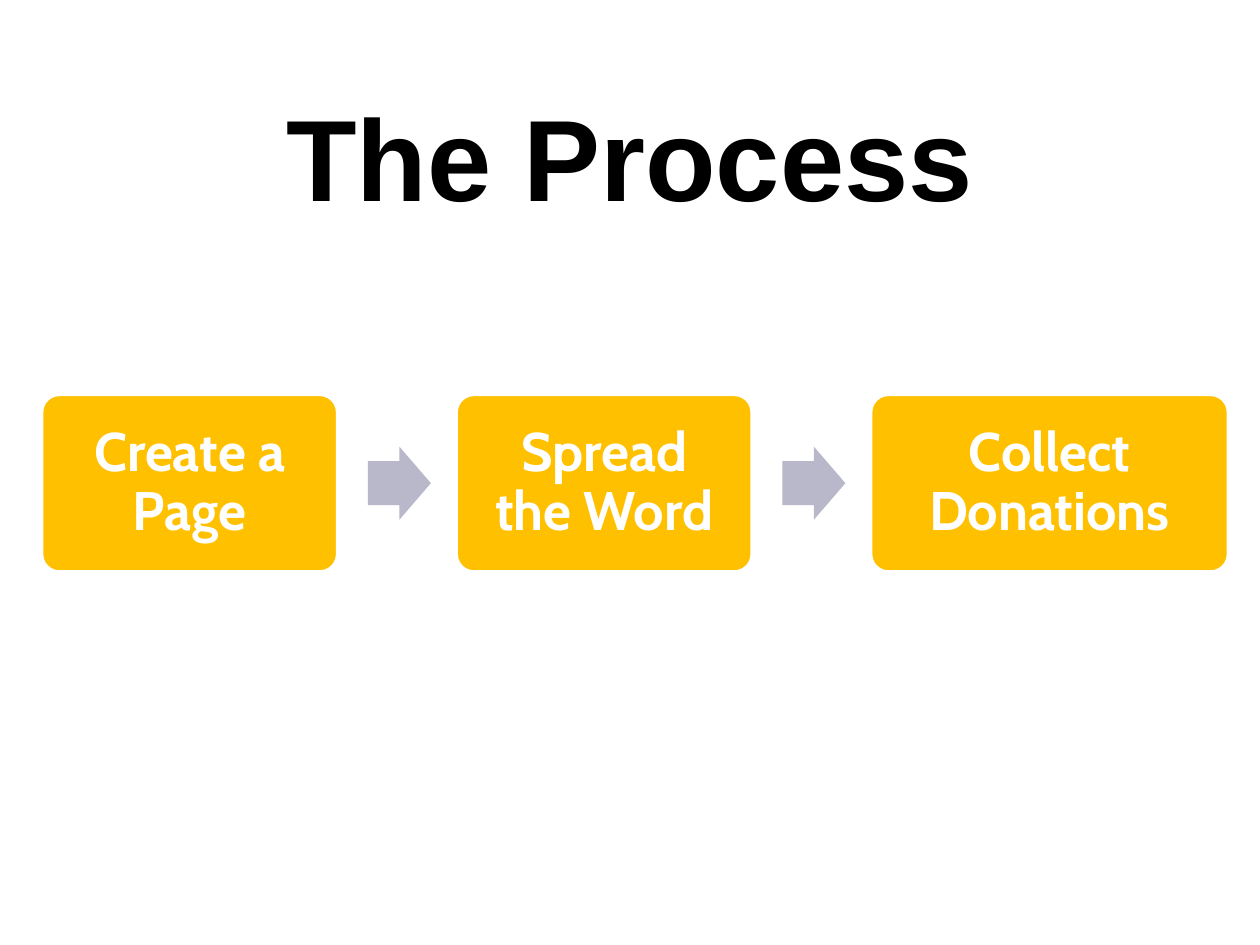
import pptx
import pptx.util
import pptx.dml.color
import pptx.enum.shapes
import pptx.enum.text

Inches = pptx.util.Inches
Pt = pptx.util.Pt
Shapes = pptx.enum.shapes.MSO_SHAPE
Anchor = pptx.enum.text.MSO_ANCHOR

SLIDE_WIDTH, SLIDE_HEIGHT = 10, 7.5
STEPS = [("Create a Page", 2.35), ("Spread the Word", 2.35), ("Collect Donations", 2.84)]
STEP_GAP = 0.94
ARROW_OFFSET, ARROW_WIDTH, ARROW_HEIGHT = 0.24, 0.5, 0.58


def color(value):
    return pptx.dml.color.RGBColor.from_string(value)


def write(shape, text, size, font_name, font_color, anchor, insets):
    frame = shape.text_frame
    frame.word_wrap = True
    frame.vertical_anchor = anchor
    frame.margin_left = frame.margin_right = Inches(insets[0])
    frame.margin_top = frame.margin_bottom = Inches(insets[1])
    paragraph = frame.paragraphs[0]
    paragraph.text = text
    paragraph.alignment = pptx.enum.text.PP_ALIGN.CENTER
    paragraph.font.size = Pt(size)
    paragraph.font.name = font_name
    paragraph.font.bold = True
    paragraph.font.color.rgb = color(font_color)
    return paragraph


def add_filled_shape(slide, kind, box, fill, adjustments):
    shape = slide.shapes.add_shape(kind, *map(Inches, box))
    shape.shadow.inherit = False
    shape.fill.solid()
    shape.fill.fore_color.rgb = color(fill)
    shape.line.fill.background()
    for index, value in enumerate(adjustments):
        shape.adjustments[index] = value
    return shape


def add_title(slide, box, text):
    title = slide.shapes.add_textbox(*map(Inches, box))
    write(title, text, 66, "Arial", "000000", Anchor.BOTTOM, (0.1, 0.05))


def add_step(slide, box, text):
    step = add_filled_shape(slide, Shapes.ROUNDED_RECTANGLE, box, "FFC000", [0.1])
    step.line.color.rgb = color("FFFFFF")
    step.line.width = Pt(2)
    paragraph = write(step, text, 31, "Cabin", "FFFFFF", Anchor.MIDDLE, (0.13, 0.13))
    paragraph.line_spacing = 0.9


def add_process(slide, left, top, height):
    """Place the steps in a row, with an arrow in each gap."""
    arrow_top = top + (height - ARROW_HEIGHT) / 2
    for index, (text, width) in enumerate(STEPS):
        if index:
            arrow_box = (left - STEP_GAP + ARROW_OFFSET, arrow_top, ARROW_WIDTH, ARROW_HEIGHT)
            add_filled_shape(slide, Shapes.RIGHT_ARROW, arrow_box, "B8B8CA", [0.6, 0.5])
        add_step(slide, (left, top, width, height), text)
        left += width + STEP_GAP


def main():
    presentation = pptx.Presentation()
    presentation.slide_width = Inches(SLIDE_WIDTH)
    presentation.slide_height = Inches(SLIDE_HEIGHT)
    slide = presentation.slides.add_slide(presentation.slide_layouts[6])
    title_width = 0.85 * SLIDE_WIDTH
    add_title(slide, ((SLIDE_WIDTH - title_width) / 2, 0.58, title_width, 1.25), "The Process")
    add_process(slide, left=0.33, top=3.13, height=1.41)
    presentation.save("out.pptx")


if __name__ == "__main__":
    main()
